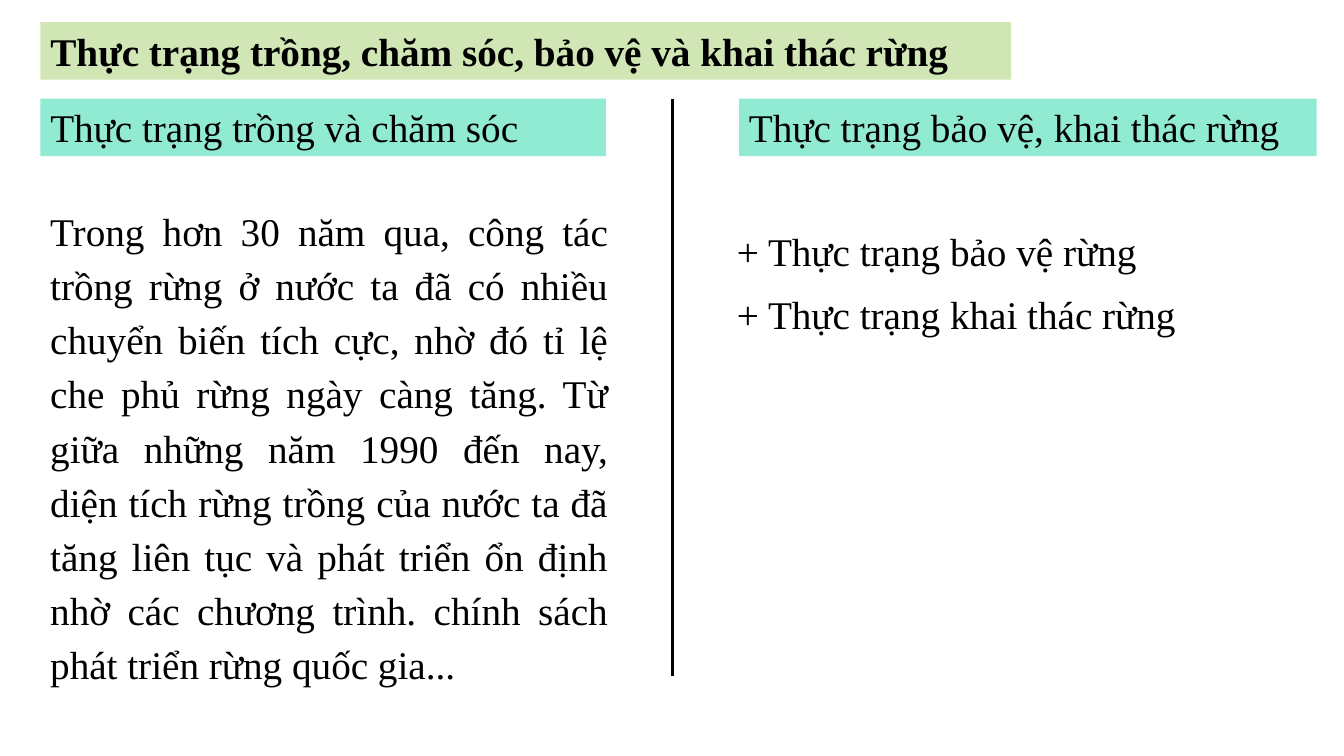
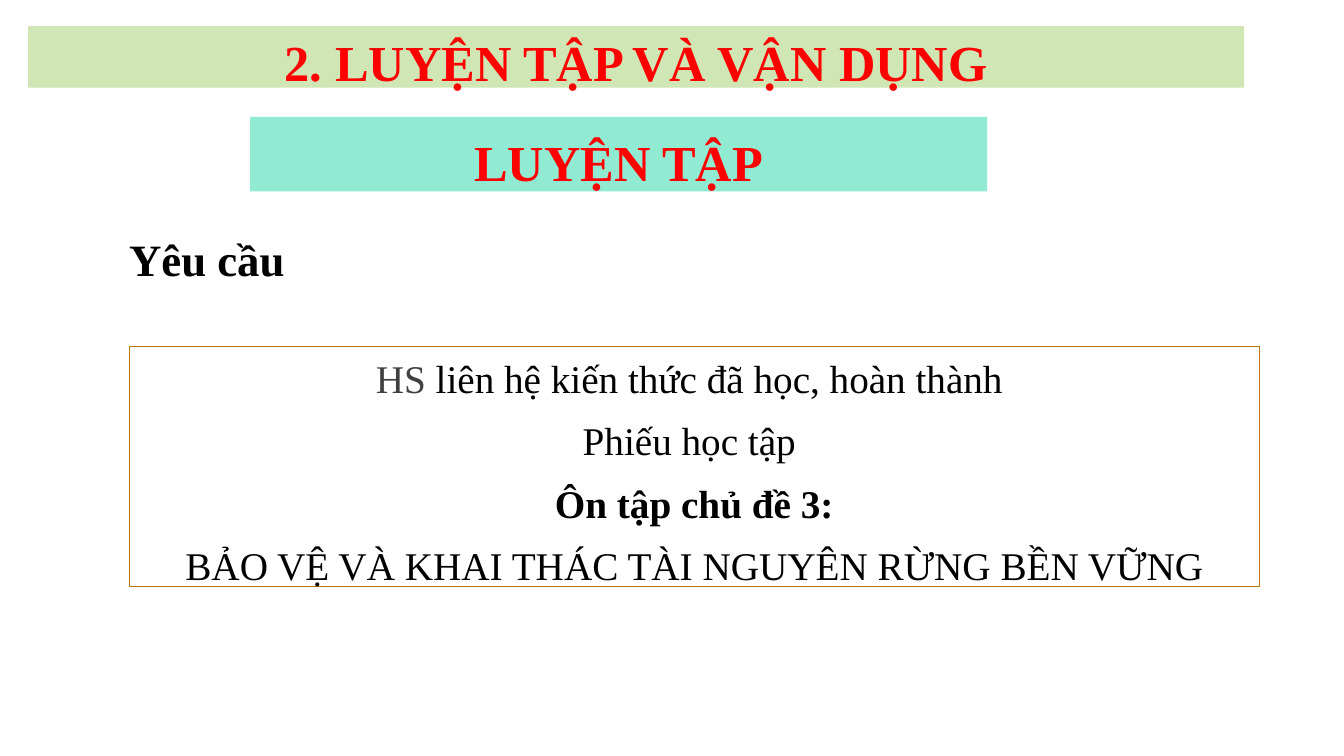
from dataclasses import dataclass

from lxml import etree
from pptx import Presentation
from pptx.dml.color import RGBColor
from pptx.enum.shapes import MSO_CONNECTOR, MSO_SHAPE
from pptx.enum.text import MSO_ANCHOR, MSO_AUTO_SIZE, PP_ALIGN
from pptx.oxml.ns import qn
from pptx.util import Emu, Pt

PX = 9144  # 100 px to the inch
FONT = "Times New Roman"
COLORS = {
    "title_band": "D1E6B5",
    "heading_band": "91EAD2",
    "text": "000000",
    "accent": "FF0000",
    "muted": "404040",
    "frame": "BC770B",
}


@dataclass(frozen=True)
class Para:
    text: str
    size: int = 28
    bold: bool = False
    color: str = "text"
    align: PP_ALIGN = PP_ALIGN.LEFT
    spacing: float | Pt = 1.0
    before: int = 0
    muted_lead: str = ""


@dataclass(frozen=True)
class Box:
    at: tuple[int, int, int, int]
    paras: tuple[Para, ...]
    fill: str = ""
    line: str = ""
    inset: bool = True


def px(n: int) -> Emu:
    return Emu(n * PX)


def rgb(name: str) -> RGBColor:
    return RGBColor.from_string(COLORS[name])


def body(text: str, align: PP_ALIGN = PP_ALIGN.JUSTIFY, **style) -> Para:
    return Para(text, align=align, spacing=1.15, before=6, **style)


def write(sp, box: Box) -> None:
    """Fill the text frame of a shape with the box's paragraphs."""
    tf = sp.text_frame
    tf.word_wrap = True
    tf.auto_size = MSO_AUTO_SIZE.NONE
    tf.vertical_anchor = MSO_ANCHOR.TOP
    if not box.inset:
        tf.margin_left = tf.margin_top = tf.margin_right = tf.margin_bottom = 0
    for i, para in enumerate(box.paras):
        p = tf.add_paragraph() if i else tf.paragraphs[0]
        p.alignment = para.align
        p.line_spacing = para.spacing
        p.space_before = Pt(para.before)
        p.font.name = FONT
        p.font.size = Pt(para.size)
        p.font.bold = para.bold
        p.font.color.rgb = rgb(para.color)
        if para.muted_lead:
            r = p.add_run()
            r.text = para.muted_lead
            r.font.color.rgb = rgb("muted")
        p.add_run().text = para.text


def add_title(slide, box: Box) -> None:
    sp = slide.shapes.title
    sp.left, sp.top, sp.width, sp.height = map(px, box.at)
    sp.fill.solid()
    sp.fill.fore_color.rgb = rgb("title_band")
    write(sp, box)


def add_box(slide, box: Box) -> None:
    at = map(px, box.at)
    if box.fill or box.line:
        sp = slide.shapes.add_shape(MSO_SHAPE.RECTANGLE, *at)
        sp.shadow.inherit = False
        if box.fill:
            sp.fill.solid()
            sp.fill.fore_color.rgb = rgb(box.fill)
        else:
            sp.fill.background()
        if box.line:
            sp.line.color.rgb = rgb(box.line)
            sp.line.width = Pt(0.75)
        else:
            sp.line.fill.background()
    else:
        sp = slide.shapes.add_textbox(*at)
    write(sp, box)


def add_divider(slide, x: int, top: int, bottom: int) -> None:
    line = slide.shapes.add_connector(
        MSO_CONNECTOR.STRAIGHT, px(x), px(top), px(x), px(bottom))
    line.line.color.rgb = rgb("text")
    line.line.width = Pt(1.5)
    etree.SubElement(line._element.spPr, qn("a:effectLst"))


def add_slide(prs, title: Box, boxes: tuple[Box, ...]):
    slide = prs.slides.add_slide(prs.slide_layouts[5])
    add_title(slide, title)
    for box in boxes:
        add_box(slide, box)
    return slide


# Slide 1: state of the forests, in two columns
STATE_TITLE = Box((40, 22, 963, 57), (
    Para("Thực trạng trồng, chăm sóc, bảo vệ và khai thác rừng", bold=True),))
STATE_BOXES = (
    Box((40, 98, 561, 57), (Para("Thực trạng trồng và chăm sóc"),),
        fill="heading_band"),
    Box((733, 98, 573, 57), (Para("Thực trạng bảo vệ, khai thác rừng"),),
        fill="heading_band"),
    Box((40, 194, 573, 493), (body(
        "Trong hơn 30 năm qua, công tác trồng rừng ở nước ta đã có nhiều "
        "chuyển biến tích cực, nhờ đó tỉ lệ che phủ rừng ngày càng tăng. "
        "Từ giữa những năm 1990 đến nay, diện tích rừng trồng của nước ta "
        "đã tăng liên tục và phát triển ổn định nhờ các chương trình. "
        "chính sách phát triển rừng quốc gia..."),)),
    Box((721, 214, 667, 122), (
        body("+ Thực trạng bảo vệ rừng"),
        body("+ Thực trạng khai thác rừng"))),
)

# Slide 2: practice task
CENTER = PP_ALIGN.CENTER
PRACTICE_TITLE = Box((28, 26, 1206, 61), (
    Para("2. LUYỆN TẬP VÀ VẬN DỤNG", 36, True, "accent", CENTER, Pt(46.6)),),
    inset=False)
PRACTICE_BOXES = (
    Box((128, 239, 219, 46), (
        Para("Yêu cầu", 32, True, align=PP_ALIGN.JUSTIFY, spacing=Pt(31.7)),),
        inset=False),
    Box((128, 344, 1121, 238), (
        body("liên hệ kiến thức đã học, hoàn thành ", CENTER, muted_lead="HS "),
        body("Phiếu học tập ", CENTER),
        body("Ôn tập chủ đề 3:", CENTER, bold=True),
        body("BẢO VỆ VÀ KHAI THÁC TÀI NGUYÊN RỪNG BỀN VỮNG", CENTER)),
        line="frame", inset=False),
    Box((248, 116, 731, 74), (
        body("LUYỆN TẬP", CENTER, size=36, bold=True, color="accent"),),
        fill="heading_band"),
)


def main() -> None:
    prs = Presentation()
    prs.slide_width, prs.slide_height = px(1333), px(750)
    state = add_slide(prs, STATE_TITLE, STATE_BOXES)
    add_divider(state, 667, 98, 671)
    add_slide(prs, PRACTICE_TITLE, PRACTICE_BOXES)
    prs.save("out.pptx")


if __name__ == "__main__":
    main()
